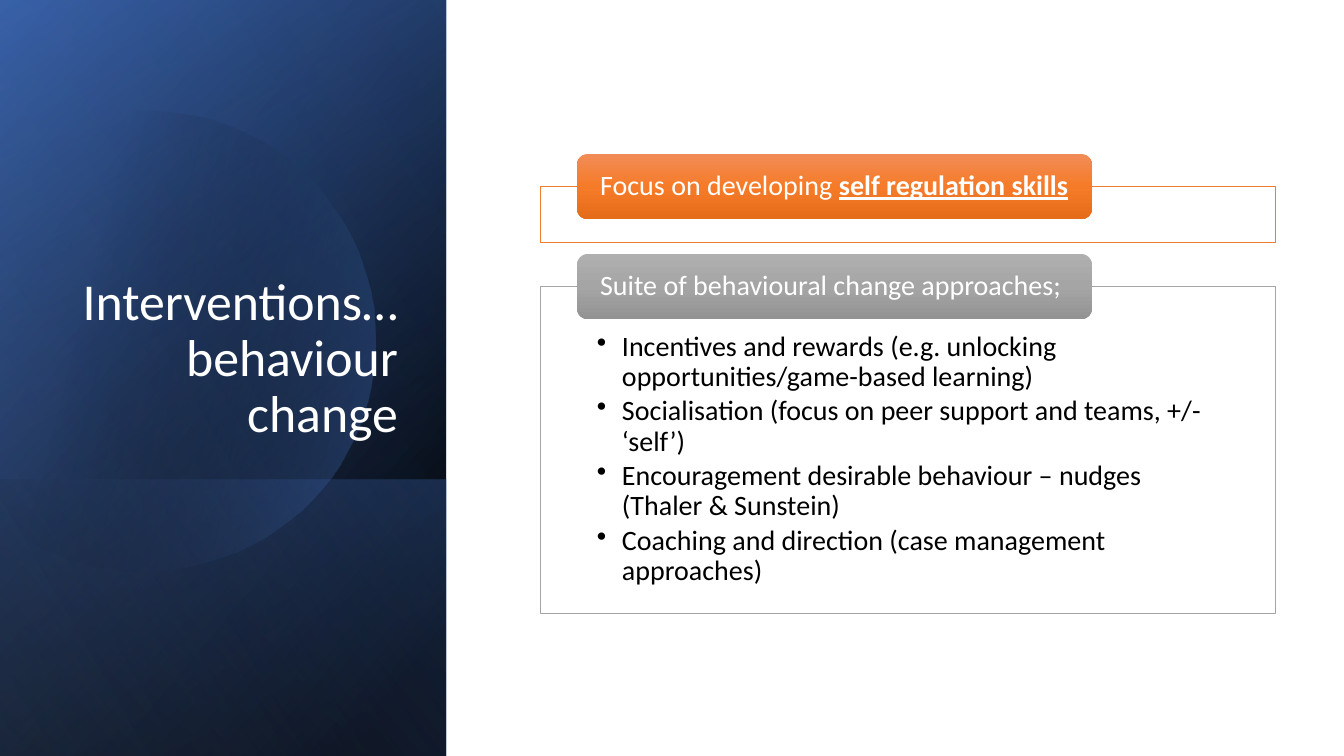
import pptx
import pptx.dml.color
import pptx.enum.shapes
import pptx.enum.text
import pptx.oxml
import pptx.oxml.ns
import pptx.util

PX = 914400 / 100.8
THEME = {
    "font": "Calibri", "title_size": 37, "body_size": 20,
    "white": "FFFFFF", "black": "000000", "blue": "4472C4",
    "deep_blue": "2F5597", "pale_blue": "8FAADC",
    "orange": "ED7D31", "orange_tab": ("F18C57", "F67B28", "E56C19"),
    "grey": "A5A5A5", "grey_tab": ("AFAFAF", "A5A5A5", "939393"),
}
MSO_SHAPE = pptx.enum.shapes.MSO_SHAPE
ANCHOR = pptx.enum.text.MSO_ANCHOR
ALIGN = pptx.enum.text.PP_ALIGN
rgb = pptx.dml.color.RGBColor.from_string
qn = pptx.oxml.ns.qn


def paint_gradient(shape, stops, angle):
    shape.shadow.inherit = False
    shape.line.fill.background()
    shape.fill.background()
    stop_xml = "".join(
        f'<a:gs pos="{position * 1000}"><a:srgbClr val="{colour}">'
        f'<a:alpha val="{alpha * 1000}"/></a:srgbClr></a:gs>'
        for position, colour, alpha in stops)
    gradient = pptx.oxml.parse_xml(
        f'<a:gradFill {pptx.oxml.ns.nsdecls("a")} rotWithShape="1"><a:gsLst>{stop_xml}</a:gsLst>'
        f'<a:lin ang="{angle * 60000}" scaled="0"/></a:gradFill>')
    properties = shape.element.spPr
    properties.replace(properties.find(qn("a:noFill")), gradient)


def write_paragraph(paragraph, runs, size, colour, align=ALIGN.LEFT):
    paragraph.alignment = align
    paragraph.line_spacing = 0.9
    for words, strong in runs:
        run = paragraph.add_run()
        run.text = words
        run.font.name = THEME["font"]
        run.font.size = pptx.util.Pt(size)
        run.font.color.rgb = rgb(colour)
        if strong:
            run.font.bold = True
            run.font.underline = True


deck = pptx.Presentation()
deck.slide_width = pptx.util.Inches(13.333)
deck.slide_height = pptx.util.Inches(7.5)
slide = deck.slides.add_slide(deck.slide_layouts[5])
shapes = slide.shapes

black, blue = THEME["black"], THEME["blue"]
panel_box = (-155, 155, 756, 446)
foot_box = (85, 395, 276, 446)
panel_layers = [
    (panel_box, [(8, black, 100), (100, THEME["deep_blue"], 100)], 50),
    (panel_box, [(0, black, 0), (99, blue, 46)], 30),
    (foot_box, [(2, blue, 29), (100, black, 30)], 130),
    (None, [(29, black, 0), (100, blue, 43)], 14),
    (panel_box, [(0, black, 0), (99, THEME["pale_blue"], 11)], 120),
]

disc_start = (150, 111)
disc_segments = [
    [(249, 113), (338, 178), (366, 277)],
    [(401, 400), (331, 528), (209, 562)],
    [(132, 585), (53, 566), (-3, 518)],
    [(-15, 507)], [(-15, 176)], [(0, 162)],
    [(23, 143), (50, 129), (81, 120)],
    [(104, 114), (127, 111), disc_start],
]
disc_outline = []
pen = disc_start
for segment in disc_segments:
    if len(segment) == 1:
        disc_outline += segment
    else:
        for step in range(1, 25):
            t = step / 24
            weights = ((1 - t) ** 3, 3 * t * (1 - t) ** 2, 3 * t * t * (1 - t), t ** 3)
            disc_outline.append(tuple(
                sum(w * point[axis] for w, point in zip(weights, [pen, *segment]))
                for axis in (0, 1)))
    pen = segment[-1]

for box, stops, angle in panel_layers:
    if box:
        layer = shapes.add_shape(MSO_SHAPE.RECTANGLE, *(round(v * PX) for v in box))
        layer.rotation = 90
        layer.element.spPr.xfrm.set("flipH", "1")
    else:
        disc = shapes.build_freeform(*disc_start, scale=PX)
        disc.add_line_segments(disc_outline, close=True)
        layer = disc.convert_to_shape()
    paint_gradient(layer, stops, angle)

title = shapes.title
layer.element.addnext(title.element)
title.left, title.top, title.width, title.height = (round(v * PX) for v in (64, 185, 344, 264))
title.text_frame.word_wrap = True
title.text_frame.auto_size = pptx.enum.text.MSO_AUTO_SIZE.NONE
title.text_frame.vertical_anchor = ANCHOR.BOTTOM
write_paragraph(title.text_frame.paragraphs[0], [("Interventions… behaviour change", False)],
                THEME["title_size"], THEME["white"], ALIGN.RIGHT)

sections = [
    (186, 56, THEME["orange"], THEME["orange_tab"],
     [("Focus on developing ", False), ("self regulation skills", True)], []),
    (286, 327, THEME["grey"], THEME["grey_tab"],
     [("Suite of behavioural change approaches;", False)],
     ["Incentives and rewards (e.g. unlocking opportunities/game-based learning)",
      "Socialisation (focus on peer support and teams, +/- ‘self’)",
      "Encouragement desirable behaviour – nudges (Thaler & Sunstein)",
      "Coaching and direction (case management approaches)"]),
]
for top, height, accent, tab_colours, heading, approaches in sections:
    frame = shapes.add_shape(MSO_SHAPE.RECTANGLE, *(round(v * PX) for v in (540, top, 735, height)))
    frame.shadow.inherit = False
    frame.fill.solid()
    frame.fill.fore_color.rgb = rgb(THEME["white"])
    frame.line.color.rgb = rgb(accent)
    frame.line.width = pptx.util.Pt(0.5)
    body = frame.text_frame
    body.word_wrap = True
    body.vertical_anchor = ANCHOR.TOP
    body.margin_left = body.margin_right = round(57 * PX)
    body.margin_top = round(46 * PX)
    body.margin_bottom = round(16 * PX)
    for index, approach in enumerate(approaches):
        paragraph = body.add_paragraph() if index else body.paragraphs[0]
        write_paragraph(paragraph, [(approach, False)], THEME["body_size"], black)
        paragraph.space_after = pptx.util.Pt(3)
        bullet_properties = paragraph._p.get_or_add_pPr()
        bullet_properties.set("marL", str(round(25 * PX)))
        bullet_properties.set("indent", str(round(-25 * PX)))
        bullet_properties.append(pptx.oxml.parse_xml(
            f'<a:buChar {pptx.oxml.ns.nsdecls("a")} char="•"/>'))

    tab = shapes.add_shape(MSO_SHAPE.ROUNDED_RECTANGLE,
                           *(round(v * PX) for v in (577, top - 32, 515, 65)))
    paint_gradient(tab, [(i * 50, colour, 100) for i, colour in enumerate(tab_colours)], 90)
    label = tab.text_frame
    label.word_wrap = True
    label.vertical_anchor = ANCHOR.MIDDLE
    label.margin_left = label.margin_right = round(20 * PX)
    label.margin_top = label.margin_bottom = 0
    write_paragraph(label.paragraphs[0], heading, THEME["body_size"], THEME["white"])

deck.save("out.pptx")
